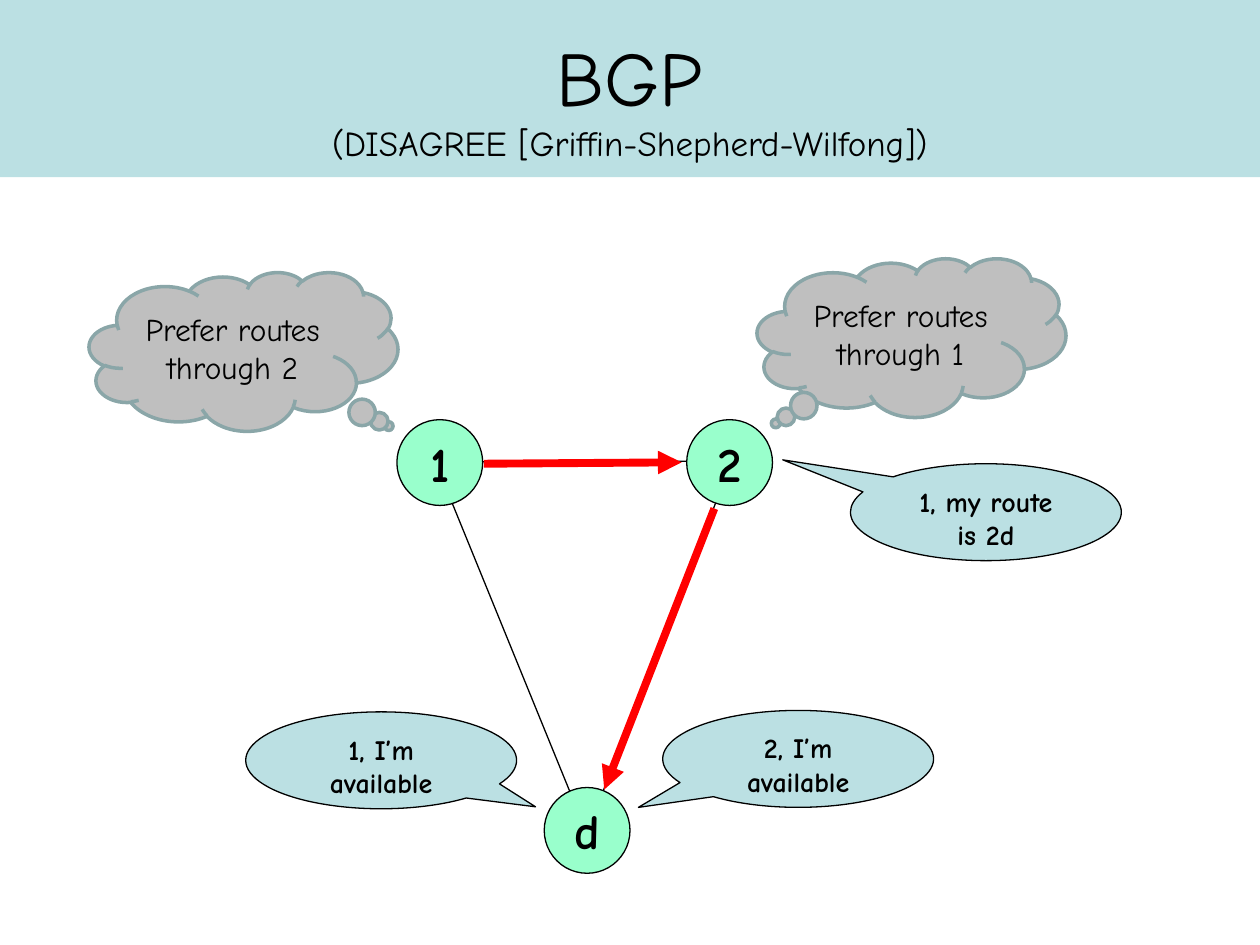
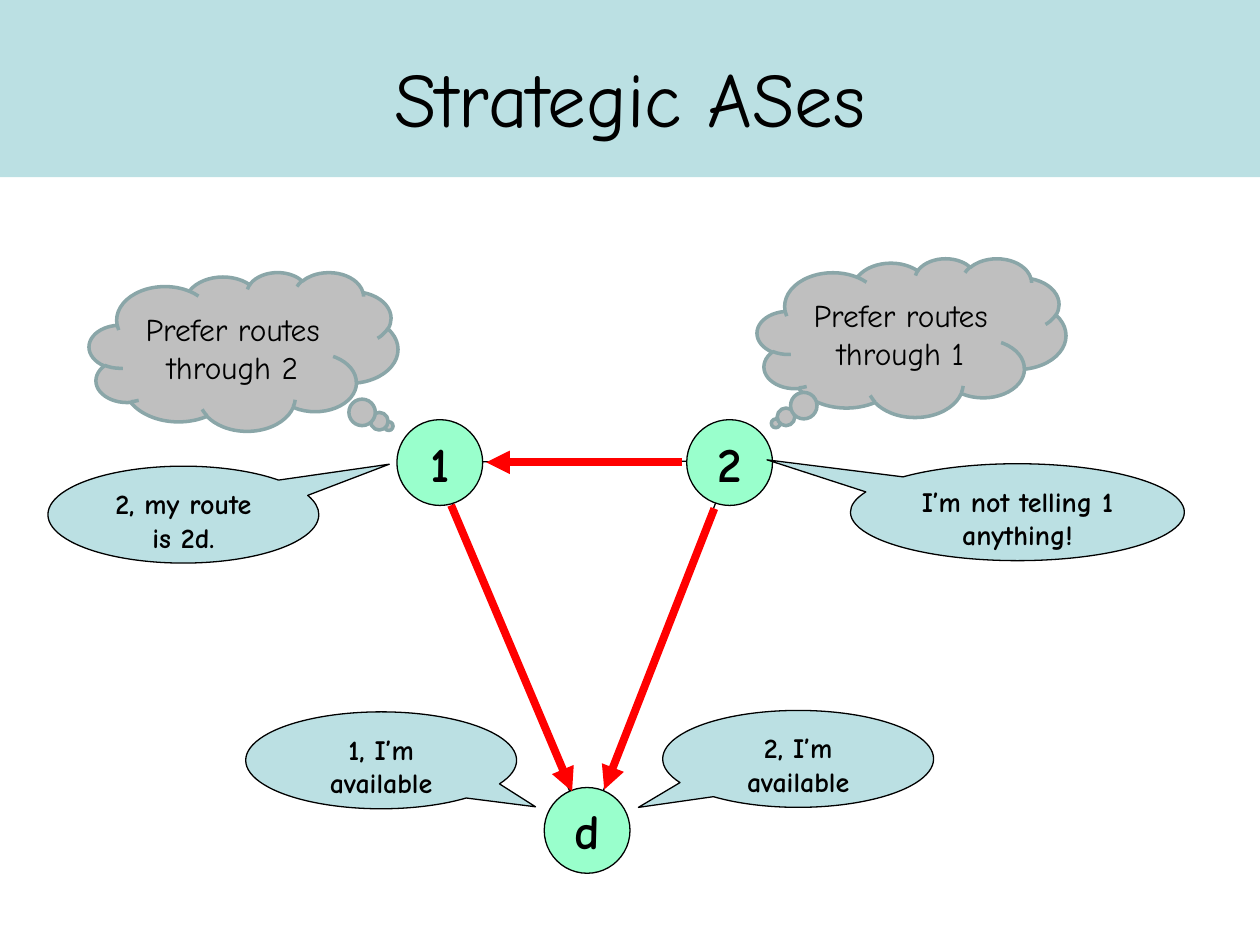
"""Build two slides on how autonomous systems announce and choose routes."""
from dataclasses import dataclass
from typing import NamedTuple

from lxml.etree import SubElement
from pptx import Presentation
from pptx.dml.color import RGBColor
from pptx.enum.shapes import MSO_CONNECTOR, MSO_SHAPE
from pptx.enum.text import MSO_ANCHOR, MSO_AUTO_SIZE, PP_ALIGN
from pptx.oxml.ns import qn
from pptx.shapes.autoshape import Shape
from pptx.slide import Slide, SlideLayout
from pptx.text.text import _Paragraph as Paragraph
from pptx.util import Pt


@dataclass(frozen=True)
class Theme:
    font: str = "Comic Neue"
    ink: RGBColor = RGBColor(0, 0, 0)
    band: RGBColor = RGBColor(0xBB, 0xE0, 0xE3)
    node: RGBColor = RGBColor(0x99, 0xFF, 0xCC)
    cloud: RGBColor = RGBColor(0xBF, 0xBF, 0xBF)
    cloud_line: RGBColor = RGBColor(0x8A, 0xA6, 0xA8)
    route: RGBColor = RGBColor(0xFF, 0, 0)
    title_size: float = 44
    subtitle_size: float = 20
    node_size: float = 28
    cloud_size: float = 18
    speech_size: float = 16
    thin: float = 0.75
    cloud_weight: float = 2
    route_weight: float = 4.5


THEME = Theme()


class Point(NamedTuple):
    x: float
    y: float


class Box(NamedTuple):
    left: float
    top: float
    width: float
    height: float


class Style(NamedTuple):
    preset: MSO_SHAPE
    fill: RGBColor
    line: RGBColor
    weight: float
    text_size: float
    bold: bool
    anchor: MSO_ANCHOR
    wrap: bool


NODE = Style(MSO_SHAPE.OVAL, THEME.node, THEME.ink, THEME.thin,
             THEME.node_size, True, MSO_ANCHOR.MIDDLE, False)
SPEECH = Style(MSO_SHAPE.OVAL_CALLOUT, THEME.band, THEME.ink, THEME.thin,
               THEME.speech_size, True, MSO_ANCHOR.TOP, True)
THOUGHT = Style(MSO_SHAPE.CLOUD_CALLOUT, THEME.cloud, THEME.cloud_line, THEME.cloud_weight,
                THEME.cloud_size, False, MSO_ANCHOR.MIDDLE, True)


@dataclass(frozen=True)
class Item:
    style: Style
    box: Box
    text: str
    pointer: tuple[float, ...] = ()


@dataclass(frozen=True)
class Arrow:
    start: Point
    end: Point


@dataclass(frozen=True)
class Scene:
    title: str
    subtitle: str
    arrows: tuple[Arrow, ...]
    speeches: tuple[Item, ...]


def node(left: float, top: float, name: str) -> Item:
    """Describe one network node."""
    return Item(NODE, Box(left, top, 49, 49), name)


def thought(left: float, top: float, text: str, *pointer: float) -> Item:
    """Describe one preference cloud."""
    return Item(THOUGHT, Box(left, top, 176.4, 90.7), text, pointer)


def speech(left: float, top: float, text: str, *pointer: float, width: float = 154.8) -> Item:
    """Describe one spoken announcement."""
    return Item(SPEECH, Box(left, top, width, 55.4), text, pointer)


CORNERS = (Point(248.8, 264), Point(418.3, 263.5), Point(335.3, 476))
SHARED_ITEMS = (
    node(226.8, 239.8, "1"),
    node(392.4, 239.8, "2"),
    node(311, 450, "d"),
    speech(378.7, 406, "2, I’m available", -0.59, 0.5),
    speech(140.4, 406.8, "1, I’m available", 0.57, 0.48),
    thought(51, 155.5, "Prefer routes through 2", 0.47, 0.47),
    thought(432.7, 147.6, "Prefer routes through 1", -0.44, 0.54),
)
TWO_TO_D = Arrow(Point(408.2, 290.6), Point(345.3, 451.2))
SCENES = (
    Scene(
        "BGP", "(DISAGREE [Griffin-Shepherd-Wilfong])",
        (TWO_TO_D, Arrow(Point(276.5, 265), Point(389.5, 264.2))),
        (speech(486, 265, "1, my route\nis 2d", -0.75, -0.54),),
    ),
    Scene(
        "Strategic ASes", "",
        (TWO_TO_D, Arrow(Point(389.5, 264.2), Point(277.9, 264.2)),
         Arrow(Point(257.8, 288.7), Point(326.9, 452.2))),
        (speech(486, 265, "I’m not telling 1 anything!", -0.75, -0.54, width=190.8),
         speech(27.4, 266.4, "2, my route\nis 2d.", 0.76, -0.52)),
    ),
)


def format_paragraph(paragraph: Paragraph, size: float, bold: bool = False) -> None:
    """Centre a paragraph and set its font."""
    paragraph.alignment = PP_ALIGN.CENTER
    font = paragraph.font
    font.name, font.size, font.bold = THEME.font, Pt(size), bold
    font.color.rgb = THEME.ink


def add_filled_shape(slide: Slide, preset: MSO_SHAPE, box: Box, fill: RGBColor) -> Shape:
    """Add a flat shape without shadow."""
    shape = slide.shapes.add_shape(preset, *map(Pt, box))
    shape.shadow.inherit = False
    shape.fill.solid()
    shape.fill.fore_color.rgb = fill
    return shape


def add_item(slide: Slide, item: Item) -> None:
    """Draw a node, speech or thought with its text."""
    style = item.style
    shape = add_filled_shape(slide, style.preset, item.box, style.fill)
    shape.line.color.rgb = style.line
    shape.line.width = Pt(style.weight)
    for index, value in enumerate(item.pointer):
        shape.adjustments[index] = value
    frame = shape.text_frame
    frame.word_wrap = style.wrap
    frame.vertical_anchor = style.anchor
    frame.text = item.text
    for paragraph in frame.paragraphs:
        format_paragraph(paragraph, style.text_size, style.bold)


def add_line(slide: Slide, start: Point, end: Point, color: RGBColor, weight: float,
             arrowhead: bool = False) -> None:
    """Draw a straight line, with an arrowhead at its end if asked."""
    connector = slide.shapes.add_connector(MSO_CONNECTOR.STRAIGHT, *map(Pt, (*start, *end)))
    connector.line.color.rgb = color
    connector.line.width = Pt(weight)
    properties = connector.element.spPr
    if arrowhead:
        SubElement(properties.find(qn("a:ln")), qn("a:tailEnd"), type="triangle")
    SubElement(properties, qn("a:effectLst"))


def add_layout_band(slide: Slide, layout: SlideLayout) -> None:
    """Place the title band at the back of the layout."""
    band = add_filled_shape(slide, MSO_SHAPE.RECTANGLE, Box(0, 0, 720, 101.3), THEME.band)
    band.line.fill.background()
    layout.shapes.element.insert(2, band.element)


def set_title(slide: Slide, scene: Scene) -> None:
    """Move the title placeholder and write its lines."""
    title = slide.shapes.title
    title.left, title.top, title.width, title.height = map(Pt, Box(36, 10, 648, 90))
    frame = title.text_frame
    frame.auto_size = MSO_AUTO_SIZE.NONE
    frame.vertical_anchor = MSO_ANCHOR.MIDDLE
    paragraph = frame.paragraphs[0]
    format_paragraph(paragraph, THEME.title_size)
    paragraph.add_run().text = scene.title
    if scene.subtitle:
        paragraph.add_line_break()
        run = paragraph.add_run()
        run.text = scene.subtitle
        run.font.size = Pt(THEME.subtitle_size)


def draw_scene(slide: Slide, scene: Scene) -> None:
    """Draw the network with its routes and announcements."""
    set_title(slide, scene)
    for start, end in zip(CORNERS, CORNERS[1:] + CORNERS[:1]):
        add_line(slide, start, end, THEME.ink, THEME.thin)
    for item in SHARED_ITEMS + scene.speeches:
        add_item(slide, item)
    for arrow in scene.arrows:
        add_line(slide, arrow.start, arrow.end, THEME.route, THEME.route_weight, arrowhead=True)


def main() -> None:
    """Build and save the presentation."""
    presentation = Presentation()
    presentation.slide_width, presentation.slide_height = Pt(720), Pt(540)
    layout = presentation.slide_layouts.get_by_name("Title Only")
    slides = [presentation.slides.add_slide(layout) for _ in SCENES]
    add_layout_band(slides[0], layout)
    for slide, scene in zip(slides, SCENES):
        draw_scene(slide, scene)
    presentation.save("out.pptx")


if __name__ == "__main__":
    main()
